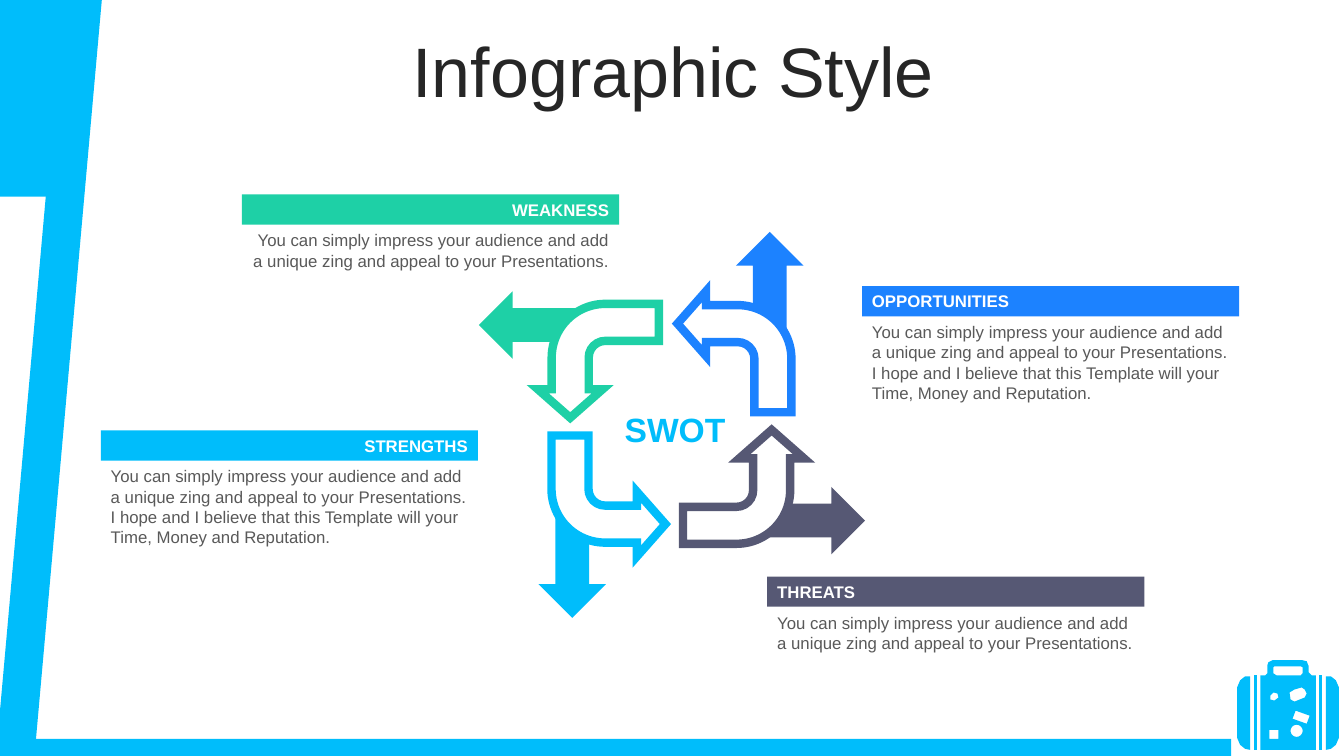
import math

import pptx
import pptx.dml.color
import pptx.enum.shapes
import pptx.enum.text
import pptx.oxml
import pptx.util

Inches = pptx.util.Inches
SHAPE = pptx.enum.shapes.MSO_SHAPE
ALIGN = pptx.enum.text.PP_ALIGN
ANCHOR = pptx.enum.text.MSO_ANCHOR

SKY, BLUE, GREEN, SLATE = "00BDFB", "1C82FF", "1ED0A6", "565874"
WHITE = "FFFFFF"

presentation = pptx.Presentation()
presentation.slide_width = Inches(13.33)
presentation.slide_height = Inches(7.5)
slide = presentation.slides.add_slide(presentation.slide_layouts[6])


def paint(shape, fill, line=None):
    color = pptx.dml.color.RGBColor.from_string
    shape.shadow.inherit = False
    shape.fill.solid()
    shape.fill.fore_color.rgb = color(fill)
    if line is None:
        shape.line.fill.background()
    else:
        shape.line.color.rgb = color(line)
        shape.line.width = pptx.util.Pt(6)
        miter = pptx.oxml.parse_xml(
            '<a:miter xmlns:a="http://schemas.openxmlformats.org/drawingml/2006/main" lim="800000"/>'
        )
        shape.line._get_or_add_ln().append(miter)


def write(shape, texts, size, color, align=ALIGN.LEFT, bold=False, anchor=ANCHOR.TOP):
    frame = shape.text_frame
    frame.word_wrap = True
    frame.vertical_anchor = anchor
    for index, text in enumerate(texts):
        paragraph = frame.add_paragraph() if index else frame.paragraphs[0]
        paragraph.alignment = align
        run = paragraph.add_run()
        run.text = text
        run.font.name = "Arial"
        run.font.size = pptx.util.Pt(size)
        run.font.bold = bold
        run.font.color.rgb = pptx.dml.color.RGBColor.from_string(color)


bottom_band = slide.shapes.add_shape(SHAPE.RECTANGLE, 0, Inches(7.33), Inches(12.21), Inches(0.17))
corner = slide.shapes.add_shape(SHAPE.RECTANGLE, 0, 0, Inches(0.79), Inches(1.95))
slant = slide.shapes.add_shape(SHAPE.PARALLELOGRAM, Inches(-0.04), 0, Inches(1.05), Inches(7.5))
slant.adjustments[0] = 0.636
for shape in (bottom_band, corner, slant):
    paint(shape, SKY)

round_sticker = [
    (12.86 + 0.06 * math.cos(math.tau * step / 24), 7.25 + 0.06 * math.sin(math.tau * step / 24))
    for step in range(24)
]
suitcase_body = [
    [(12.5, 6.7), (12.55, 6.7), (12.57, 6.68), (12.57, 6.6), (12.58, 6.57), (12.62, 6.55),
     (12.92, 6.55), (12.96, 6.56), (12.98, 6.61), (12.98, 6.67), (13.01, 6.7), (13.05, 6.7),
     (13.05, 7.44), (12.5, 7.44)],
    [(12.64, 6.61), (12.63, 6.62), (12.63, 6.68), (12.66, 6.7), (12.9, 6.7), (12.92, 6.68),
     (12.92, 6.62), (12.9, 6.61)],
    [(12.91, 6.82), (12.84, 6.84), (12.79, 6.87), (12.8, 6.94), (12.84, 6.96), (12.94, 6.92),
     (12.96, 6.88), (12.94, 6.84)],
    [(12.99, 7.1), (12.85, 7.05), (12.82, 7.13), (12.96, 7.18)],
    round_sticker,
    [(12.68, 7.24), (12.59, 7.24), (12.59, 7.33), (12.68, 7.33)],
    [(12.6, 6.94), (12.64, 6.95), (12.68, 6.92), (12.67, 6.88), (12.63, 6.87), (12.6, 6.9)],
]
left_side = [(12.4, 6.71), (12.4, 7.44), (12.35, 7.43), (12.3, 7.39), (12.27, 7.32),
             (12.27, 6.82), (12.3, 6.75), (12.35, 6.71)]
right_side = [(25.55 - x, y) for x, y in left_side]
stripes = [[(x, 6.7), (x + 0.03, 6.7), (x + 0.03, 7.44), (x, 7.44)] for x in (12.44, 13.08)]
for outlines in [suitcase_body, [left_side], [right_side], *[[stripe] for stripe in stripes]]:
    contours = [[(round(x * 1000), round(y * 1000)) for x, y in outline] for outline in outlines]
    builder = slide.shapes.build_freeform(*contours[0][0], scale=914.4)
    builder.add_line_segments(contours[0][1:])
    for contour in contours[1:]:
        builder.move_to(*contour[0])
        builder.add_line_segments(contour[1:])
    paint(builder.convert_to_shape(), SKY)

title = slide.shapes.add_textbox(Inches(0.35), Inches(0.37), Inches(12.66), Inches(0.79))
write(title, ["Infographic Style"], 50, "262626", ALIGN.CENTER, anchor=ANCHOR.MIDDLE)
title.text_frame.paragraphs[0].line_spacing = 0.8

arrows = [
    (BLUE, (7.1, 2.5), 270, (6.72, 2.89), 0),
    (GREEN, (4.75, 2.89), 180, (5.37, 2.98), 270),
    (SKY, (5.14, 5.26), 90, (5.47, 4.32), 180),
    (SLATE, (7.51, 4.83), 0, (6.81, 4.23), 90),
]
for color, (left, top), turn, (bent_left, bent_top), bent_turn in arrows:
    straight = slide.shapes.add_shape(
        SHAPE.RIGHT_ARROW, Inches(left), Inches(top), Inches(1.07), Inches(0.67))
    straight.rotation = turn
    paint(straight, color)
    bent = slide.shapes.add_shape(
        SHAPE.BENT_ARROW, Inches(bent_left), Inches(bent_top), Inches(1.13), Inches(1.2))
    for index, value in enumerate((0.325, 0.284, 0.25, 0.471)):
        bent.adjustments[index] = value
    bent.rotation = bent_turn
    bent._element.spPr.xfrm.set("flipH", "1")
    paint(bent, WHITE, color)

impress = "You can simply impress your audience and add a unique zing and appeal to your Presentations."
believe = "I hope and I believe that this Template will your Time, Money and Reputation."
panels = [
    ("STRENGTHS", SKY, 1, 4.27, ALIGN.RIGHT, ALIGN.LEFT, [impress, believe]),
    ("THREATS", SLATE, 7.61, 5.72, ALIGN.LEFT, ALIGN.LEFT, [impress]),
    ("OPPORTUNITIES", BLUE, 8.55, 2.84, ALIGN.LEFT, ALIGN.LEFT, [impress, believe]),
    ("WEAKNESS", GREEN, 2.4, 1.93, ALIGN.RIGHT, ALIGN.RIGHT, [impress]),
]
for heading, color, left, top, heading_align, body_align, texts in panels:
    bar = slide.shapes.add_shape(
        SHAPE.RECTANGLE, Inches(left), Inches(top), Inches(3.74), Inches(0.3))
    paint(bar, color)
    write(bar, [heading], 12, WHITE, heading_align, bold=True)
    body = slide.shapes.add_textbox(
        Inches(left), Inches(top + 0.305), Inches(3.74), Inches(0.1 + 0.4 * len(texts)))
    write(body, texts, 12, "595959", body_align)

center_label = slide.shapes.add_textbox(Inches(5.94), Inches(4.01), Inches(1.51), Inches(0.5))
write(center_label, ["SWOT"], 24, SKY, ALIGN.CENTER, bold=True)

presentation.save("out.pptx")
